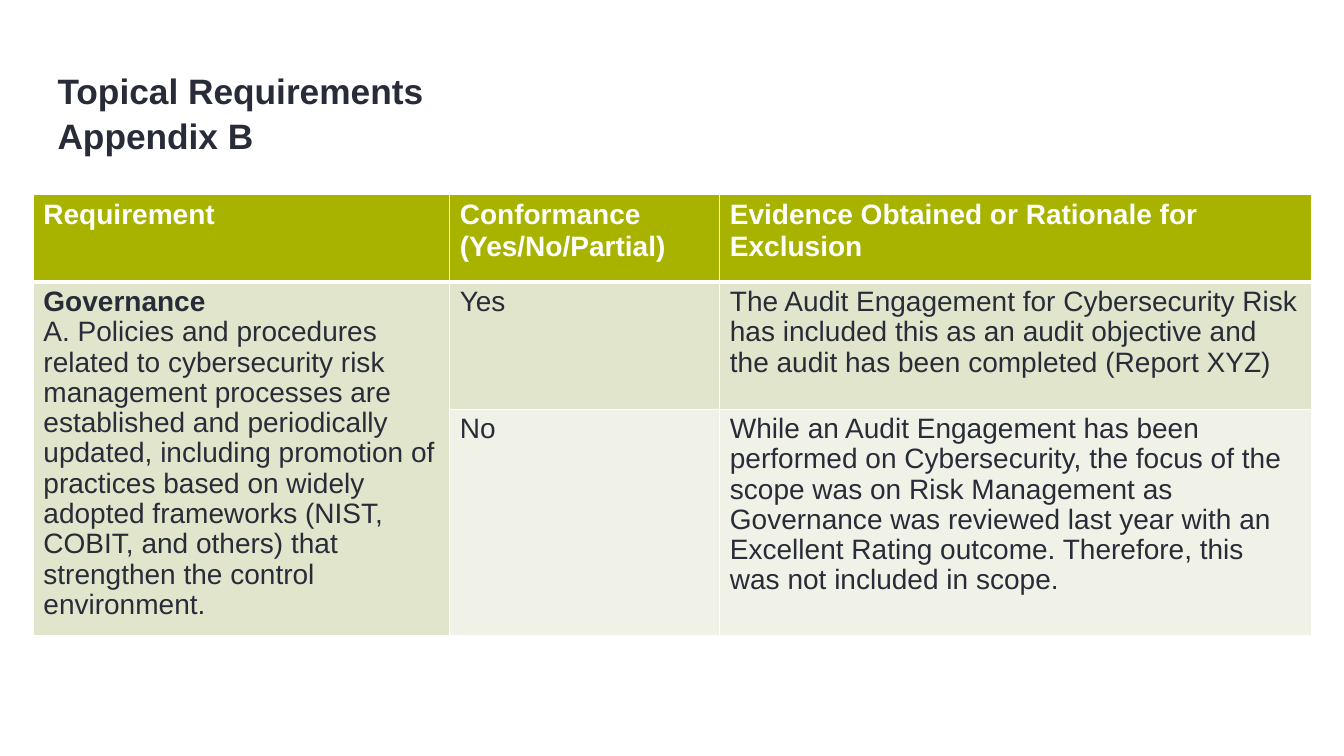
import pptx
import pptx.dml.color
import pptx.enum.text
import pptx.oxml
import pptx.oxml.ns
import pptx.util

COLORS = {"ink": "282C38", "white": "FFFFFF", "header": "A8B300",
          "band": "E1E5CC", "pale": "F1F2E7"}
HEADER = {"size": 20, "bold": True, "color": "white"}
BODY = {"size": 20, "bold": False, "color": "ink", "spacing": 0.97}
LEAD = {**BODY, "bold": True}


class Deck:
    """Holds the style and the current slide; lengths are percent of the slide."""

    font = "Arial"

    def __init__(self, width, height):
        self.prs = pptx.Presentation()
        self.prs.slide_width = pptx.util.Inches(width)
        self.prs.slide_height = pptx.util.Inches(height)
        self.slide = self.prs.slides.add_slide(self.prs.slide_layouts[5])

    def x(self, share):
        return round(self.prs.slide_width * share / 100)

    def y(self, share):
        return round(self.prs.slide_height * share / 100)

    def color(self, name):
        return pptx.dml.color.RGBColor.from_string(COLORS[name])

    def paragraph(self, p, text, fmt):
        p.text = text
        p.alignment = pptx.enum.text.PP_ALIGN.LEFT
        p.line_spacing = fmt.get("spacing", 1.0)
        for r in p.runs:
            values = {"name": self.font, "size": pptx.util.Pt(fmt["size"]),
                      "bold": fmt["bold"]}
            for key, value in values.items():
                setattr(r.font, key, value)
            r.font.color.rgb = self.color(fmt["color"])

    def title(self, text, left, top, width, height, fmt):
        sp = self.slide.shapes.title
        box = {"left": self.x(left), "top": self.y(top),
               "width": self.x(width), "height": self.y(height)}
        for key, value in box.items():
            setattr(sp, key, value)
        tf = sp.text_frame
        frame = {"word_wrap": True,
                 "auto_size": pptx.enum.text.MSO_AUTO_SIZE.NONE,
                 "vertical_anchor": pptx.enum.text.MSO_ANCHOR.BOTTOM}
        for key, value in frame.items():
            setattr(tf, key, value)
        self.paragraph(tf.paragraphs[0], text, fmt)

    def borders(self, cell, widths):
        tc_pr = cell._tc.get_or_add_tcPr()
        for i, (side, width) in enumerate(widths.items()):
            tc_pr.insert(i, pptx.oxml.parse_xml(
                f'<a:ln{side} {pptx.oxml.ns.nsdecls("a")} w="{pptx.util.Pt(width)}">'
                f'<a:solidFill><a:srgbClr val="{COLORS["white"]}"/></a:solidFill>'
                f'</a:ln{side}>'))

    def cell(self, cell, paragraphs, fill, widths):
        cell.fill.solid()
        cell.fill.fore_color.rgb = self.color(fill)
        self.borders(cell, widths)
        tf = cell.text_frame
        for i, (text, fmt) in enumerate(paragraphs):
            p = tf.add_paragraph() if i else tf.paragraphs[0]
            self.paragraph(p, text, fmt)

    def table(self, left, top, columns, heights, rows, fills):
        table = self.slide.shapes.add_table(
            len(heights), len(columns), self.x(left), self.y(top),
            self.x(sum(columns)), self.y(sum(heights))).table
        table.horz_banding = False
        for column, width in zip(table.columns, columns):
            column.width = self.x(width)
        for r, (row, fill) in enumerate(zip(rows, fills)):
            table.rows[r].height = self.y(heights[r])
            # A thick rule separates the header from the body
            widths = {"L": 1, "R": 1, "T": 3 if r == 1 else 1, "B": 3 if r == 0 else 1}
            for c, paragraphs in enumerate(row):
                self.cell(table.cell(r, c), paragraphs, fill, widths)
        return table


def main():
    deck = Deck(13.33, 7.5)

    # Title
    deck.title("Topical Requirements\vAppendix B", 3.53, 11.2, 82.07, 10.13,
               {"size": 25.2, "bold": True, "color": "ink", "spacing": 1.05})

    # Conformance table
    rows = [
        [[("Requirement", HEADER)],
         [("Conformance", HEADER), ("(Yes/No/Partial)", HEADER)],
         [("Evidence Obtained or Rationale for Exclusion", HEADER)]],
        [[("Governance", LEAD),
          ("A. Policies and procedures related to cybersecurity risk management "
           "processes are established and periodically updated, including promotion "
           "of practices based on widely adopted frameworks (NIST, COBIT, and others) "
           "that strengthen the control environment.", BODY)],
         [("Yes", BODY)],
         [("The Audit Engagement for Cybersecurity Risk has included this as an audit "
           "objective and the audit has been completed (Report XYZ)", BODY)]],
        [[],
         [("No", BODY)],
         [("While an Audit Engagement has been performed on Cybersecurity, the focus "
           "of the scope was on Risk Management as Governance was reviewed last year "
           "with an Excellent Rating outcome. Therefore, this was not included in "
           "scope.", BODY)]],
    ]
    table = deck.table(2.48, 25.73, [30.98, 20.1, 44.04], [11.6, 16.8, 29.9],
                       rows, ["header", "band", "pale"])

    # The requirement spans both answers
    table.cell(1, 0).merge(table.cell(2, 0))

    deck.prs.save("out.pptx")


if __name__ == "__main__":
    main()
